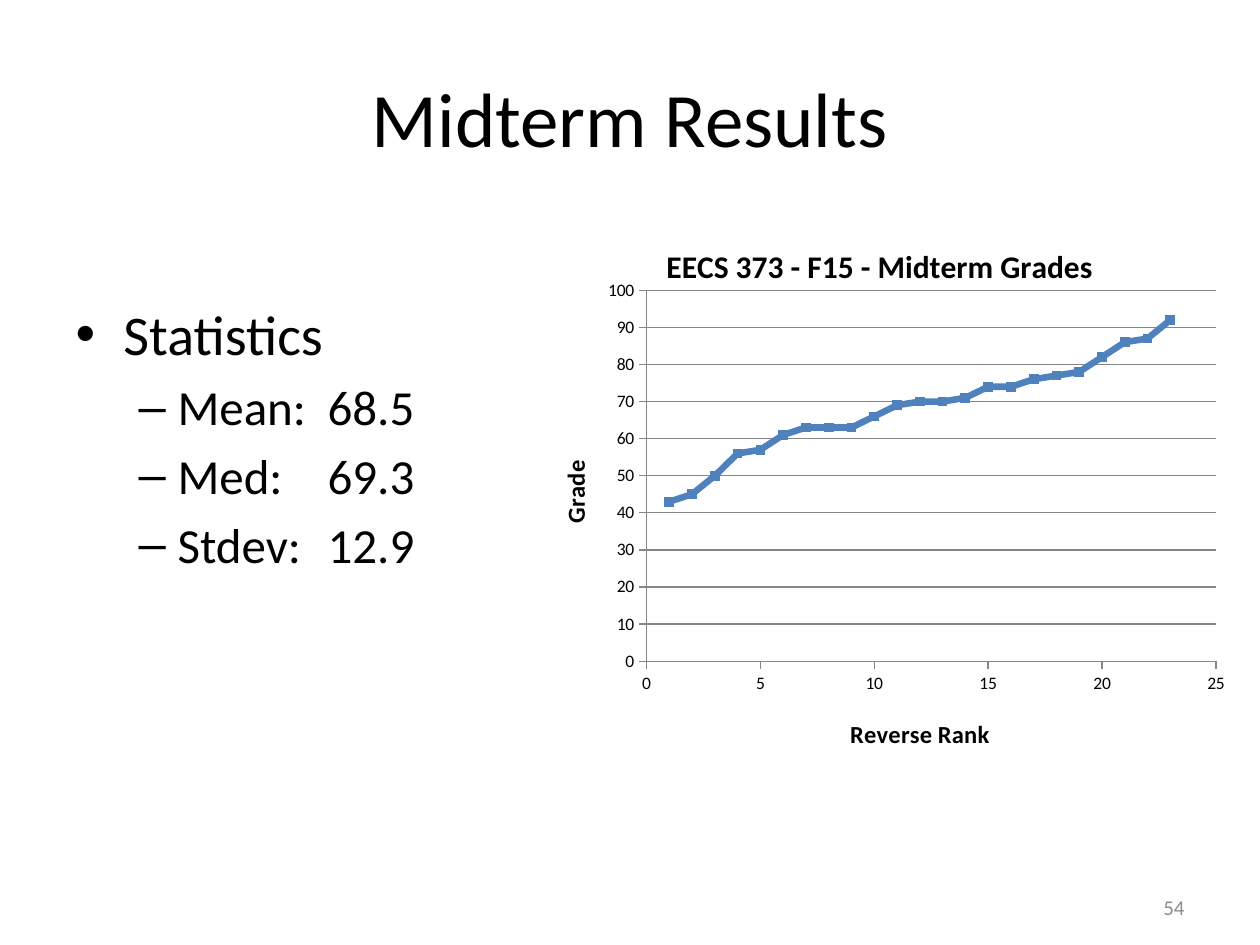
from dataclasses import dataclass

from lxml import etree
from pptx import Presentation
from pptx.chart.data import XyChartData
from pptx.dml.color import RGBColor
from pptx.enum.chart import XL_CHART_TYPE as ChartType
from pptx.enum.chart import XL_MARKER_STYLE as MarkerStyle
from pptx.enum.chart import XL_TICK_MARK as TickMark
from pptx.enum.text import MSO_ANCHOR as Anchor
from pptx.enum.text import MSO_AUTO_SIZE as AutoSize
from pptx.enum.text import PP_ALIGN as Align
from pptx.oxml.ns import qn
from pptx.util import Inches, Pt


@dataclass(frozen=True)
class Theme:
    font: str = "Calibri"
    text: RGBColor = RGBColor(0x00, 0x00, 0x00)
    muted: RGBColor = RGBColor(0x8C, 0x8C, 0x8C)
    series: RGBColor = RGBColor(0x4F, 0x81, 0xBD)
    grid: RGBColor = RGBColor(0x86, 0x86, 0x86)
    title_size: int = 44
    body_sizes: tuple = (32, 28)
    number_size: int = 12
    chart_size: int = 10
    axis_title_size: int = 14
    chart_title_size: int = 18


THEME = Theme()

# Left margin and hanging indent for each list level
INDENTS = ((0.38, 0.38), (0.81, 0.31))
BULLETS = "•–"

STATISTICS = [
    (0, "Statistics"),
    (1, "Mean: \t68.5"),
    (1, "Med:\t69.3"),
    (1, "Stdev:\t12.9"),
]
GRADES = [43, 45, 50, 56, 57, 61, 63, 63, 63, 66, 69, 70,
          70, 71, 74, 74, 76, 77, 78, 82, 86, 87, 92]


def place(shape, box):
    for name, value in zip(("left", "top", "width", "height"), box):
        setattr(shape, name, Inches(value))


def style_font(font, size, color=THEME.text, bold=False):
    values = {"name": THEME.font, "size": Pt(size), "bold": bold}
    for name, value in values.items():
        setattr(font, name, value)
    font.color.rgb = color


def add_title(slide, box, text):
    title = slide.shapes.title
    place(title, box)
    frame = title.text_frame
    frame.vertical_anchor = Anchor.MIDDLE
    paragraph = frame.paragraphs[0]
    paragraph.text = text
    paragraph.alignment = Align.CENTER
    style_font(paragraph.font, THEME.title_size)


def add_statistics(slide, box, items):
    body = slide.placeholders[1]
    place(body, box)
    frame = body.text_frame
    frame.auto_size = AutoSize.NONE
    for index, (level, text) in enumerate(items):
        paragraph = frame.paragraphs[0] if index == 0 else frame.add_paragraph()
        paragraph.text = text
        paragraph.level = level
        if index == 0:
            paragraph.space_before = Pt(0)
        margin, hanging = INDENTS[level]
        properties = paragraph._p.get_or_add_pPr()
        properties.set("marL", str(Inches(margin)))
        properties.set("indent", str(-Inches(hanging)))
        bullet = etree.SubElement(properties, qn("a:buChar"))
        bullet.set("char", BULLETS[level])
        style_font(paragraph.font, THEME.body_sizes[level])


def add_slide_number(slide, box, text):
    shape = slide.shapes.add_textbox(*map(Inches, box))
    frame = shape.text_frame
    frame.word_wrap = True
    frame.vertical_anchor = Anchor.MIDDLE
    paragraph = frame.paragraphs[0]
    paragraph.text = text
    paragraph.alignment = Align.RIGHT
    style_font(paragraph.font, THEME.number_size, THEME.muted)


def set_layout(element, position, inner=False):
    """Place a chart part by fractions of the chart: x, y and maybe w, h."""
    for old in element.findall(qn("c:layout")):
        element.remove(old)
    layout = etree.Element(qn("c:layout"))
    manual = etree.SubElement(layout, qn("c:manualLayout"))
    settings = [("layoutTarget", "inner")] if inner else []
    settings += [("xMode", "edge"), ("yMode", "edge")]
    settings += zip("xywh", position)
    for name, value in settings:
        etree.SubElement(manual, qn(f"c:{name}")).set("val", str(value))
    text = element.find(qn("c:tx"))
    element.insert(0 if text is None else element.index(text) + 1, layout)


def set_chart_title(owner, text, size, position):
    owner.has_title = True
    title = owner.chart_title if hasattr(owner, "chart_title") else owner.axis_title
    paragraph = title.text_frame.paragraphs[0]
    paragraph.text = text
    style_font(paragraph.runs[0].font, size, bold=True)
    set_layout(title._element, position)


def style_axis(axis, maximum, unit, gridlines):
    values = {
        "minimum_scale": 0,
        "maximum_scale": maximum,
        "major_unit": unit,
        "major_tick_mark": TickMark.OUTSIDE,
        "minor_tick_mark": TickMark.NONE,
        "has_major_gridlines": gridlines,
    }
    for name, value in values.items():
        setattr(axis, name, value)
    axis.tick_labels.number_format = "General"
    axis.tick_labels.number_format_is_linked = False
    formats = [axis.format]
    if gridlines:
        formats.append(axis.major_gridlines.format)
    for line_format in formats:
        line_format.line.color.rgb = THEME.grid
        line_format.line.width = Pt(0.75)


def add_grade_chart(slide, box, grades):
    data = XyChartData(number_format="General")
    points = data.add_series("Series 1")
    for rank, grade in enumerate(grades, start=1):
        points.add_data_point(rank, grade)
    frame = slide.shapes.add_chart(
        ChartType.XY_SCATTER_SMOOTH, *map(Inches, box), data)
    chart = frame.chart
    chart.has_legend = False
    style_font(chart.font, THEME.chart_size)

    # Titles, axes and plot area
    set_chart_title(chart, "EECS 373 - F15 - Midterm Grades",
                    THEME.chart_title_size, (0.19, 0.07))
    set_chart_title(chart.category_axis, "Reverse Rank",
                    THEME.axis_title_size, (0.45, 0.9))
    set_chart_title(chart.value_axis, "Grade",
                    THEME.axis_title_size, (0.04, 0.45))
    style_axis(chart.category_axis, 25, 5, gridlines=False)
    style_axis(chart.value_axis, 100, 10, gridlines=True)
    plot = chart.plots[0]
    plot.vary_by_categories = False
    set_layout(plot._element.getparent(), (0.17, 0.16, 0.8, 0.65), inner=True)

    # Grade curve
    series = plot.series[0]
    series.smooth = True
    series.format.line.color.rgb = THEME.series
    series.format.line.width = Pt(3.75)
    marker = series.marker
    marker.style = MarkerStyle.SQUARE
    marker.size = 5
    marker.format.fill.solid()
    marker.format.fill.fore_color.rgb = THEME.series
    marker.format.line.color.rgb = THEME.series


def main():
    presentation = Presentation()
    presentation.slide_width = Inches(10)
    presentation.slide_height = Inches(7.5)
    slide = presentation.slides.add_slide(presentation.slide_layouts[1])
    add_title(slide, (0.5, 0.3, 9, 1.25), "Midterm Results")
    add_statistics(slide, (0.5, 2.33, 3.83, 2.83), STATISTICS)
    add_slide_number(slide, (7.17, 7, 2.33, 0.4), "54")
    add_grade_chart(slide, (4.17, 1.58, 5.65, 4.53), GRADES)
    presentation.save("out.pptx")


if __name__ == "__main__":
    main()
